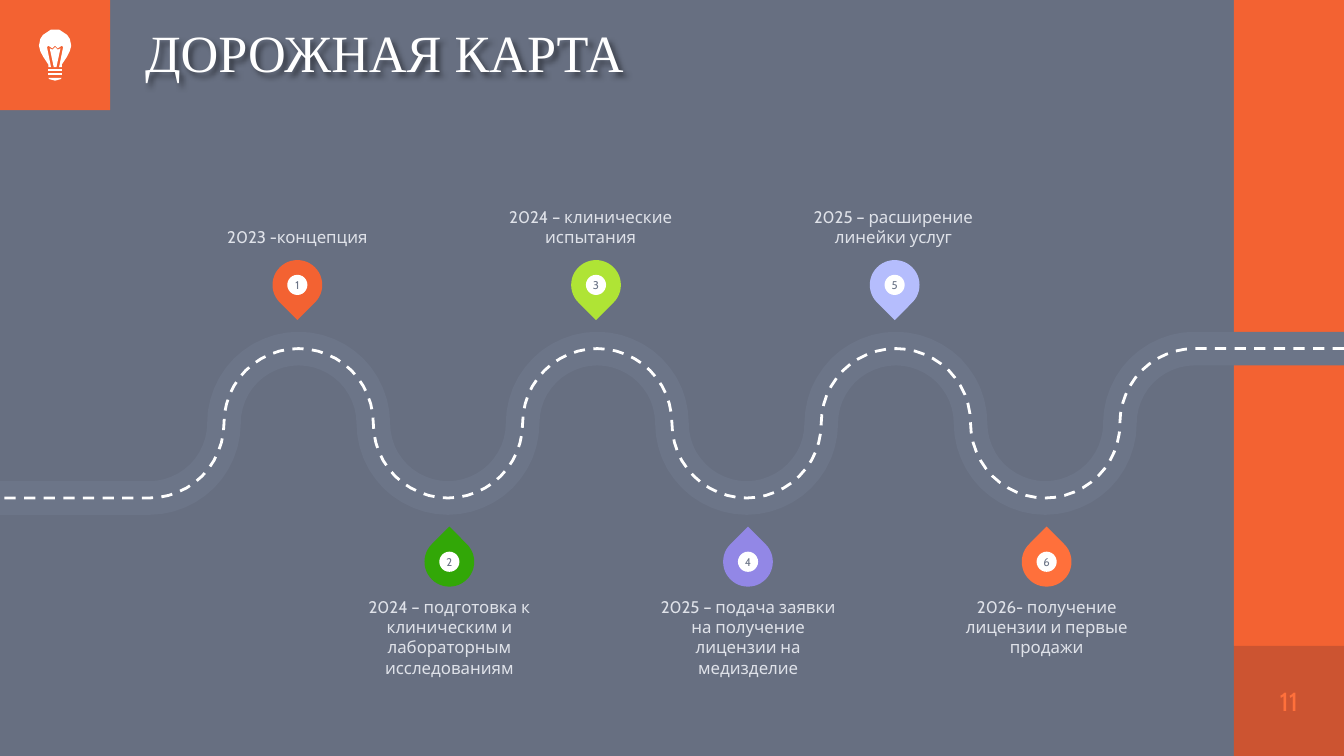
from dataclasses import dataclass
from math import cos, pi, sin

from lxml.etree import SubElement as Sub
from pptx import Presentation
from pptx.dml.color import RGBColor as Rgb
from pptx.enum.dml import MSO_LINE as Dash
from pptx.enum.shapes import MSO_SHAPE as Kind
from pptx.enum.text import MSO_ANCHOR as Anchor, PP_ALIGN as Align
from pptx.oxml.ns import qn
from pptx.util import Inches, Pt


@dataclass(frozen=True)
class Theme:
    white: str = "FFFFFF"
    navy: str = "02102E"
    orange: str = "F36232"
    coral: str = "FF703B"
    road: str = "6C7588"
    label: str = "DFE2E9"
    head: str = "Times New Roman"
    body: str = "Cabin"
    title_pt: int = 28
    page_pt: int = 14
    label_pt: int = 9
    badge_pt: int = 6


T = Theme()
W, H = 10, 5.625
SIDE = 0.82           # corner squares and right band
STEP = W / 9          # distance between neighbouring bends
MID = 3.15            # height of the road's axis
BENDS = 8
GRAIN = 1000          # outline units per inch

# bend, text, pin colour, label shift
STOPS = [
    (2, "2023 -концепция", T.orange, 0),
    (3, "2024 – подготовка к клиническим и лабораторным исследованиям", "32A707", 0),
    (4, "2024 – клинические испытания", "AFE435", -0.04),
    (5, "2025 – подача заявки на получение лицензии на медизделие", "9287E6", 0),
    (6, "2025 – расширение линейки услуг", "B5BDFD", -0.01),
    (7, "2026- получение лицензии и первые продажи", T.coral, 0),
]

# right halves of the bulb's parts: distance from its axis, height on the slide
BULB = [
    [(0.05, 0.54), (0.05, 0.56)],
    [(0.05, 0.51), (0.05, 0.53)],
    [(0.05, 0.58), (0.04, 0.59), (0, 0.6)],
    [(0, 0.35), (0.02, 0.37), (0.04, 0.36), (0.01, 0.5)],
    [(0, 0.22), (0.03, 0.22), (0.06, 0.24), (0.09, 0.26), (0.11, 0.29),
     (0.12, 0.34), (0.11, 0.38), (0.09, 0.42), (0.07, 0.45), (0.05, 0.48),
     (0.05, 0.5), (0.03, 0.5), (0.06, 0.35), (0.05, 0.34), (0.02, 0.36), (0, 0.34)],
]


def paint(shape, color, alpha=100):
    shape.shadow.inherit = False
    shape.line.fill.background()
    shape.fill.solid()
    shape.fill.fore_color.rgb = Rgb.from_string(color)
    if alpha < 100:
        tone = shape.fill._xPr.find(".//" + qn("a:srgbClr"))
        Sub(tone, qn("a:alpha"), val=str(alpha * 1000))


def add_block(slide, kind, x, y, w, h, color, alpha=100):
    shape = slide.shapes.add_shape(kind, *map(Inches, (x, y, w, h)))
    paint(shape, color, alpha)
    return shape


def write(shape, text, size, color, font=T.body, align=Align.CENTER, anchor=Anchor.MIDDLE):
    frame = shape.text_frame
    frame.text = text
    frame.word_wrap = True
    frame.vertical_anchor = anchor
    frame.margin_left = frame.margin_right = 0
    frame.margin_top = frame.margin_bottom = 0
    line = frame.paragraphs[0]
    line.alignment = align
    face = line.runs[0].font
    face.name, face.size = font, Pt(size)
    face.color.rgb = Rgb.from_string(color)
    return line


def add_text(slide, box, *args, **style):
    write(slide.shapes.add_textbox(*map(Inches, box)), *args, **style)


def add_path(slide, points, close):
    dots = [(x * GRAIN, y * GRAIN) for x, y in points]
    pen = slide.shapes.build_freeform(*dots[0], scale=Inches(1) / GRAIN)
    pen.add_line_segments(dots[1:], close=close)
    shape = pen.convert_to_shape()
    shape.shadow.inherit = False
    return shape


def set_title(slide):
    title = slide.shapes.title
    title.left, title.top = Inches(1.08), 0
    title.width, title.height = Inches(8.1), Inches(SIDE)
    line = write(title, "ДОРОЖНАЯ КАРТА", T.title_pt, T.white, T.head, Align.LEFT)
    line.line_spacing = 0.9
    title.fill.background()
    glow = Sub(title._element.spPr, qn("a:effectLst"))
    cast = Sub(glow, qn("a:outerShdw"), blurRad="38100", dist="38100", dir="2700000")
    Sub(Sub(cast, qn("a:srgbClr"), val="000000"), qn("a:alpha"), val="43000")
    slide.shapes._spTree.append(title._element)


def add_bulb(slide):
    axis = SIDE / 2
    for half in BULB:
        right = [(axis + dx, y) for dx, y in half]
        left = [(axis - dx, y) for dx, y in reversed(half)]
        paint(add_path(slide, right + left, True), T.white)


def road_points(steps=24):
    """Half circles turned down and up by turns, with straight ends."""
    r = STEP / 2
    points = [(0, MID + r)]
    for bend in range(1, BENDS + 1):
        turn = 1 if bend % 2 else -1
        first = steps // 2 if bend == 1 else 0
        last = steps // 2 if bend == BENDS else steps
        for i in range(first, last + 1):
            a = pi * i / steps
            points.append((bend * STEP - r * cos(a), MID + turn * r * sin(a)))
    return points + [(W, MID - r)]


def add_road(slide):
    points = road_points()[::-1]
    for color, width, dash in ((T.road, 18, None), (T.white, 1.5, Dash.DASH)):
        line = add_path(slide, points, False)
        line.fill.background()
        line.line.color.rgb = Rgb.from_string(color)
        line.line.width = Pt(width)
        line.line.dash_style = dash


def add_stop(slide, number, bend, text, color, shift):
    above = bend % 2 == 0
    x = bend * STEP + (-0.01 if above else 0.01)
    y = 2.12 if above else 4.18
    pin, dot = 0.37, 0.15
    drop = add_block(slide, Kind.TEAR, x - pin / 2, y - pin / 2, pin, pin, color)
    drop.rotation = 135 if above else 315
    badge = add_block(slide, Kind.OVAL, x - dot / 2, y - dot / 2, dot, dot, T.white)
    write(badge, str(number), T.badge_pt, T.road)
    wide = 1.41
    box = (x + shift - wide / 2, 1.26 if above else 4.44, wide, 0.58)
    add_text(slide, box, text, T.label_pt, T.label,
             anchor=Anchor.BOTTOM if above else Anchor.TOP)


def main():
    deck = Presentation()
    deck.slide_width, deck.slide_height = Inches(W), Inches(H)
    slide = deck.slides.add_slide(deck.slide_layouts[5])
    back = slide.background.fill
    back.solid()
    back.fore_color.rgb = Rgb.from_string(T.white)
    corner = (W - SIDE, H - SIDE, SIDE, SIDE)
    add_block(slide, Kind.RECTANGLE, 0, 0, W, H, T.navy, 60)
    add_block(slide, Kind.RECTANGLE, W - SIDE, 0, SIDE, H, T.orange)
    add_block(slide, Kind.RECTANGLE, 0, 0, SIDE, SIDE, T.orange)
    set_title(slide)
    add_block(slide, Kind.RECTANGLE, *corner, T.navy, 16)
    add_text(slide, corner, "11", T.page_pt, T.coral)
    add_road(slide)
    for number, stop in enumerate(STOPS, 1):
        add_stop(slide, number, *stop)
    add_bulb(slide)
    deck.save("out.pptx")


if __name__ == "__main__":
    main()
